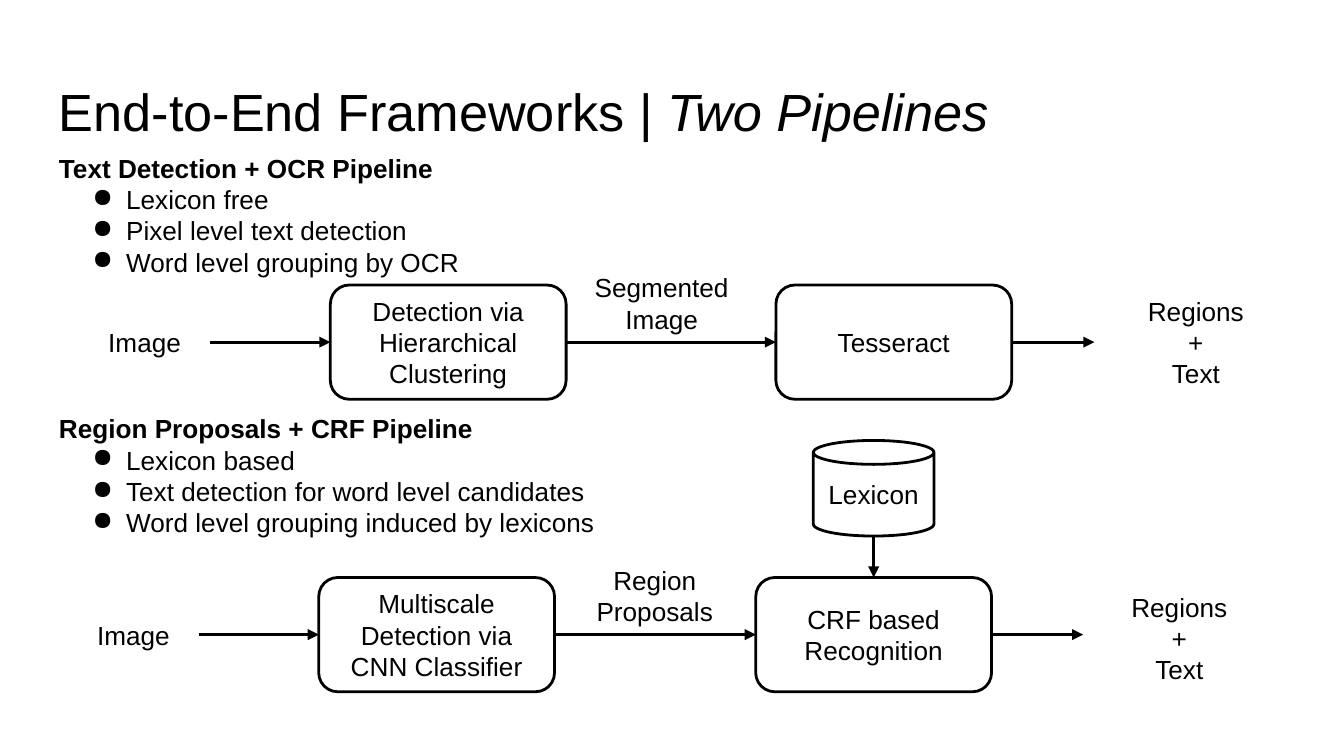
from dataclasses import dataclass
from lxml.etree import SubElement
from pptx import Presentation
from pptx.dml.color import RGBColor
from pptx.enum.shapes import MSO_CONNECTOR, MSO_SHAPE
from pptx.enum.text import MSO_ANCHOR, PP_ALIGN
from pptx.oxml.ns import qn
from pptx.util import Pt


@dataclass(frozen=True)
class Theme:
    ink: RGBColor = RGBColor(0, 0, 0)
    face: str = "Arial"
    title: float = 28
    body: float = 14
    line: float = 1.5
    inset: float = 7.2


THEME = Theme()
TOP, LEFT, BOTTOM, RIGHT = range(4)
BOX_W, BOX_H = 126.3, 61.2
IN_W, IN_H = 70, 28
TAG_W, TAG_H = 103, 40


def apply(item, style):
    for name, value in style.items():
        setattr(item, name, value)


def style_font(font, **extra):
    apply(font, {"name": THEME.face, "size": Pt(THEME.body)} | extra)
    font.color.rgb = THEME.ink


def set_frame(shape, anchor):
    frame = shape.text_frame
    sides = ("left", "top", "right", "bottom")
    style = {f"margin_{side}": Pt(THEME.inset) for side in sides}
    apply(frame, style | {"word_wrap": True, "vertical_anchor": anchor})
    return frame


def add_lines(shape, lines, anchor=MSO_ANCHOR.MIDDLE):
    """Put one centred paragraph in the shape for each line."""
    frame = set_frame(shape, anchor)
    frame.text = "\n".join(lines)
    for para in frame.paragraphs:
        para.alignment = PP_ALIGN.CENTER
        style_font(para.font)


def add_text(slide, area, lines, anchor=MSO_ANCHOR.MIDDLE):
    box = slide.shapes.add_textbox(*map(Pt, area))
    add_lines(box, lines, anchor)
    return box


def add_node(slide, kind, area, text):
    node = slide.shapes.add_shape(kind, *map(Pt, area))
    node.shadow.inherit = False
    node.fill.background()
    node.line.color.rgb = THEME.ink
    node.line.width = Pt(THEME.line)
    add_lines(node, [text])
    return node


def add_arrow(slide, start, end):
    """Draw an arrow between two (x, y) points in slide units."""
    arrow = slide.shapes.add_connector(MSO_CONNECTOR.STRAIGHT, *start, *end)
    arrow.line.color.rgb = THEME.ink
    arrow.line.width = Pt(THEME.line)
    line = arrow.line._get_or_add_ln()
    SubElement(line, qn("a:tailEnd"), type="triangle")
    SubElement(arrow._element.spPr, qn("a:effectLst"))
    return arrow


def join(slide, first, second):
    """Link the right side of one shape to the left side of the next."""
    arrow = add_arrow(slide, (0, 0), (0, 0))
    arrow.begin_connect(first, RIGHT)
    arrow.end_connect(second, LEFT)


def add_title(slide, area, plain, slant):
    frame = set_frame(slide.shapes.add_textbox(*map(Pt, area)), MSO_ANCHOR.TOP)
    for text, italic in ((plain, False), (slant, True)):
        run = frame.paragraphs[0].add_run()
        run.text = text
        style_font(run.font, size=Pt(THEME.title), italic=italic)


def add_list(slide, area, head, items):
    box = slide.shapes.add_textbox(*map(Pt, area))
    frame = set_frame(box, MSO_ANCHOR.MIDDLE)
    frame.text = "\n".join([head, *items])
    first, *rest = frame.paragraphs
    style_font(first.font, bold=True)
    for para in rest:
        props = para._p.get_or_add_pPr()
        props.set("marL", str(Pt(36)))
        props.set("indent", str(Pt(-18)))
        SubElement(props, qn("a:buChar"), char="●")
        style_font(para.font)


def add_flow(slide, mid, steps, source, result, tag):
    """Draw input, two steps and output on one line; return the last step."""
    top = mid - BOX_H / 2
    nodes = [add_text(slide, (source, mid - IN_H / 2, IN_W, IN_H), ["Image"])]
    for left, text in steps:
        area = (left, top, BOX_W, BOX_H)
        nodes.append(add_node(slide, MSO_SHAPE.ROUNDED_RECTANGLE, area, text))
    left, width, anchor = result
    area = (left, top, width, BOX_H)
    nodes.append(add_text(slide, area, ["Regions", "+", "Text"], anchor))
    for first, second in zip(nodes, nodes[1:]):
        join(slide, first, second)
    left, lines = tag
    area = (left, mid - 45, TAG_W, TAG_H)
    add_text(slide, area, lines, MSO_ANCHOR.TOP)
    return nodes[2]


def add_store(slide, area, text, target):
    """Draw a data store above the target and point it downwards."""
    store = add_node(slide, MSO_SHAPE.CAN, area, text)
    mid = target.left + target.width // 2
    foot = store.top + store.height
    arrow = add_arrow(slide, (mid, foot), (mid, target.top))
    arrow.end_connect(target, TOP)


def main():
    deck = Presentation()
    deck.slide_width, deck.slide_height = Pt(720), Pt(405)
    slide = deck.slides.add_slide(deck.slide_layouts[6])

    add_title(slide, (24.5, 35.3, 671, 45.4),
              "End-to-End Frameworks | ", "Two Pipelines")

    add_flow(slide, 183.3,
             [(177, "Detection via Hierarchical Clustering"),
              (415.7, "Tesseract")],
             source=42.5, result=(586.3, 108.7, MSO_ANCHOR.MIDDLE),
             tag=(303, ["Segmented", "Image"]))
    add_list(slide, (24.5, 80, 285, 70), "Text Detection + OCR Pipeline",
             ["Lexicon free", "Pixel level text detection",
              "Word level grouping by OCR"])

    crf = add_flow(slide, 340,
                   [(170.8, "Multiscale Detection via CNN Classifier"),
                    (404.9, "CRF based Recognition")],
                   source=36.5, result=(580.3, 103, MSO_ANCHOR.TOP),
                   tag=(299.3, ["Region", "Proposals"]))
    add_store(slide, (435.7, 236, 64.6, 51.2), "Lexicon", crf)
    add_list(slide, (24.5, 224, 345.6, 61.2), "Region Proposals + CRF Pipeline",
             ["Lexicon based", "Text detection for word level candidates",
              "Word level grouping induced by lexicons"])

    deck.save("out.pptx")


if __name__ == "__main__":
    main()
